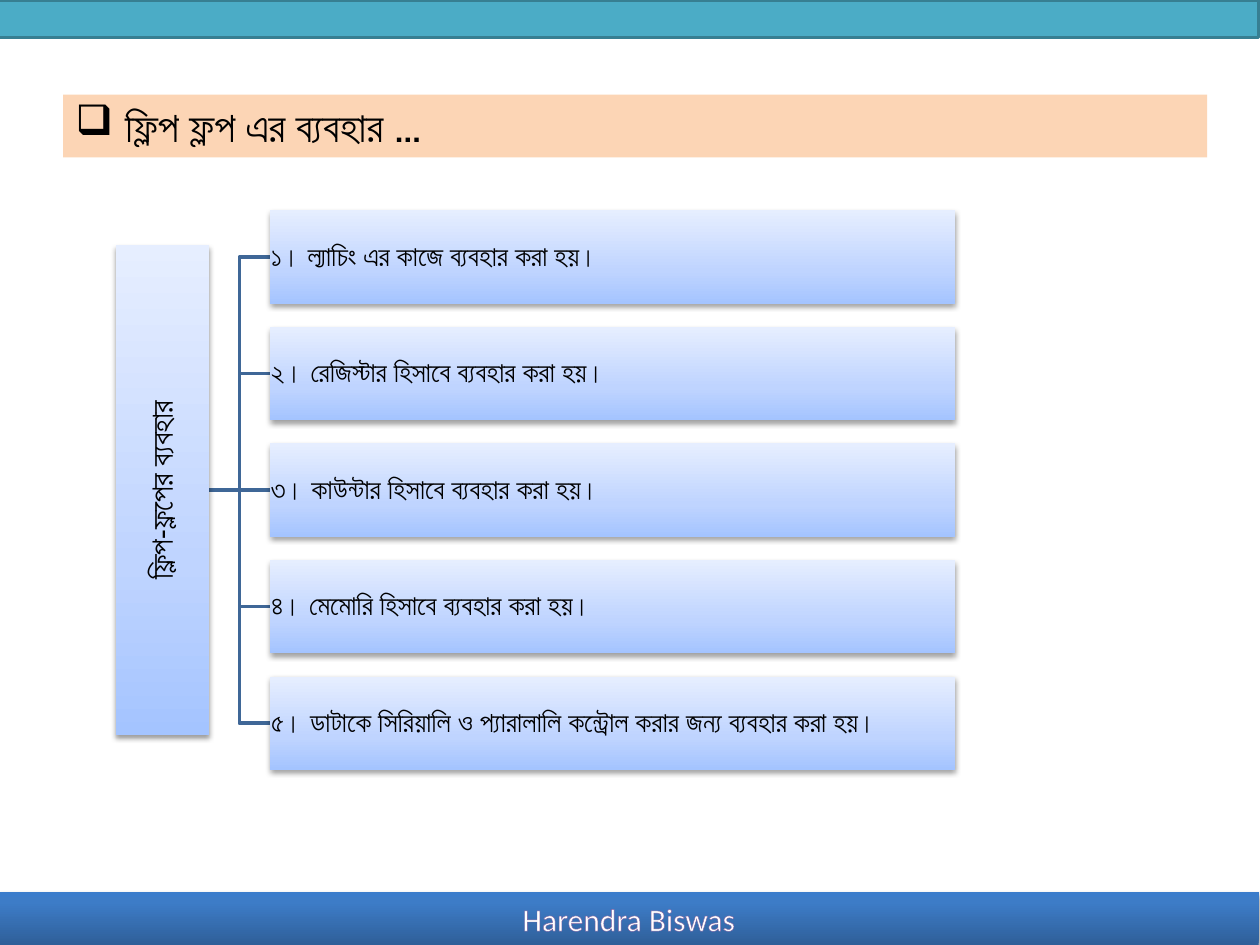
from lxml import etree
from pptx import Presentation
from pptx.dml.color import RGBColor
from pptx.enum import shapes, text
from pptx.oxml import parse_xml
from pptx.oxml.ns import nsdecls, qn
from pptx.util import Inches, Pt

TITLE = " ফ্লিপ ফ্লপ এর ব্যবহার …"
ROOT = "ফ্লিপ-ফ্লপের ব্যবহার"
USES = [
    "১। ল্যাচিং এর কাজে ব্যবহার করা হয়।",
    "২। রেজিস্টার হিসাবে ব্যবহার করা হয়।",
    "৩। কাউন্টার হিসাবে ব্যবহার করা হয়।",
    "৪। মেমোরি হিসাবে ব্যবহার করা হয়।",
    "৫। ডাটাকে সিরিয়ালি ও প্যারালালি কন্ট্রোল করার জন্য ব্যবহার করা হয়।",
]
AUTHOR = "Harendra Biswas"

FONT = "Calibri"
BRANCH_COLOR = "3F6797"
BOX_STOPS = [(0, "A4C4FF"), (35, "BFD4FF"), (100, "E6EEFF")]
FOOTER_STOPS = [(0, "2F5F99"), (80, "3D7CC7"), (100, "3A7CCB")]

BOX_H = 0.74
PITCH = BOX_H * 1.25
TOP = 1.67
USE_X, USE_W = 2.14, 5.44
ROOT_RIGHT, ROOT_LEN = 1.66, 3.89
TRUNK_X = (ROOT_RIGHT + USE_X) / 2
MIDDLE = len(USES) // 2


def rgb(color):
    return RGBColor.from_string(color)


def add_rect(s, x, y, w, h):
    sp = s.shapes.add_shape(shapes.MSO_SHAPE.RECTANGLE,
                            Inches(x), Inches(y), Inches(w), Inches(h))
    sp.shadow.inherit = False
    return sp


def add_glossy_rect(s, x, y, w, h, stops, shadow_alpha, shadow_dist):
    """Borderless rectangle with an upward gradient and a soft shadow below."""
    sp = add_rect(s, x, y, w, h)
    sp.line.fill.background()
    gs = "".join(f'<a:gs pos="{pos * 1000}"><a:srgbClr val="{color}"/></a:gs>'
                 for pos, color in stops)
    sp_pr = sp._element.spPr
    sp_pr.insert(2, parse_xml(
        f'<a:gradFill {nsdecls("a")} rotWithShape="0"><a:gsLst>{gs}</a:gsLst>'
        '<a:lin ang="16200000" scaled="0"/></a:gradFill>'))
    sp_pr.find(qn("a:effectLst")).append(parse_xml(
        f'<a:outerShdw {nsdecls("a")} blurRad="{Pt(3.1)}" dist="{Pt(shadow_dist)}" '
        'dir="5400000" rotWithShape="0"><a:srgbClr val="000000">'
        f'<a:alpha val="{shadow_alpha * 1000}"/></a:srgbClr></a:outerShdw>'))
    return sp


def set_text(sp, content, size, align, color="000000"):
    tf = sp.text_frame
    tf.word_wrap = True
    tf.vertical_anchor = text.MSO_ANCHOR.MIDDLE
    tf.text = content
    p = tf.paragraphs[0]
    p.alignment = align
    font = p.runs[0].font
    font.name, font.size = FONT, Pt(size)
    font.color.rgb = rgb(color)
    return p


def add_box(s, x, y, w, content, size, align):
    sp = add_glossy_rect(s, x, y, w, BOX_H, BOX_STOPS, 38, 1.6)
    p = set_text(sp, content, size, align)
    p.line_spacing = 0.9
    tf = sp.text_frame
    tf.margin_left = tf.margin_right = tf.margin_top = tf.margin_bottom = Inches(0.01)
    return sp


def add_branch(s, y_from, y_to, straight):
    if straight:
        line = s.shapes.add_connector(shapes.MSO_CONNECTOR.STRAIGHT, Inches(ROOT_RIGHT),
                                      Inches(y_from), Inches(USE_X), Inches(y_from))
    else:
        path = s.shapes.build_freeform(Inches(ROOT_RIGHT), Inches(y_from))
        corners = [(TRUNK_X, y_from), (TRUNK_X, y_to), (USE_X, y_to)]
        path.add_line_segments([(Inches(x), Inches(y)) for x, y in corners], close=False)
        line = path.convert_to_shape()
        line.fill.background()
    line.line.color.rgb = rgb(BRANCH_COLOR)
    line.line.width = Pt(2)
    etree.SubElement(line._element.spPr, qn("a:effectLst"))


def add_title(s):
    title = s.shapes.title
    title.left, title.top, title.width, title.height = map(Inches, (0.5, 0.75, 9.08, 0.5))
    title.fill.solid()
    title.fill.fore_color.rgb = rgb("FCD5B5")
    p = set_text(title, TITLE, 24, text.PP_ALIGN.LEFT)
    p_pr = p._p.get_or_add_pPr()
    p_pr.set("marL", str(Inches(0.31)))
    p_pr.set("indent", str(-Inches(0.31)))
    etree.SubElement(p_pr, qn("a:buFont"), typeface="Wingdings")
    etree.SubElement(p_pr, qn("a:buChar"), char="q")


def add_bars(s):
    footer = add_glossy_rect(s, -0.01, 7.08, 10, 0.42, FOOTER_STOPS, 35, 1.8)
    p = set_text(footer, AUTHOR, 18, text.PP_ALIGN.CENTER, "FFFFFF")
    p.runs[0]._r.get_or_add_rPr().insert(0, parse_xml(
        f'<a:ln {nsdecls("a")} w="{Pt(0.75)}"><a:solidFill>'
        '<a:srgbClr val="7D60A0"/></a:solidFill></a:ln>'))
    header = add_rect(s, -0.01, 0, 10, 0.3)
    header.fill.solid()
    header.fill.fore_color.rgb = rgb("4BACC6")
    header.line.color.rgb = rgb("377F92")
    header.line.width = Pt(2)


def add_tree(s):
    tops = [TOP + PITCH * i for i in range(len(USES))]
    centers = [top + BOX_H / 2 for top in tops]
    trunk_y = centers[MIDDLE]
    for i, center in enumerate(centers):
        add_branch(s, trunk_y, center, i == MIDDLE)
    root_x = ROOT_RIGHT - BOX_H / 2 - ROOT_LEN / 2
    root = add_box(s, root_x, tops[MIDDLE], ROOT_LEN, ROOT, 18, text.PP_ALIGN.CENTER)
    root.rotation = 270
    for top, use in zip(tops, USES):
        add_box(s, USE_X, top, USE_W, use, 16, text.PP_ALIGN.JUSTIFY)


def main():
    prs = Presentation()
    prs.slide_width, prs.slide_height = Inches(10), Inches(7.5)
    s = prs.slides.add_slide(prs.slide_layouts[5])
    add_bars(s)
    add_title(s)
    add_tree(s)
    prs.save("out.pptx")


if __name__ == "__main__":
    main()
